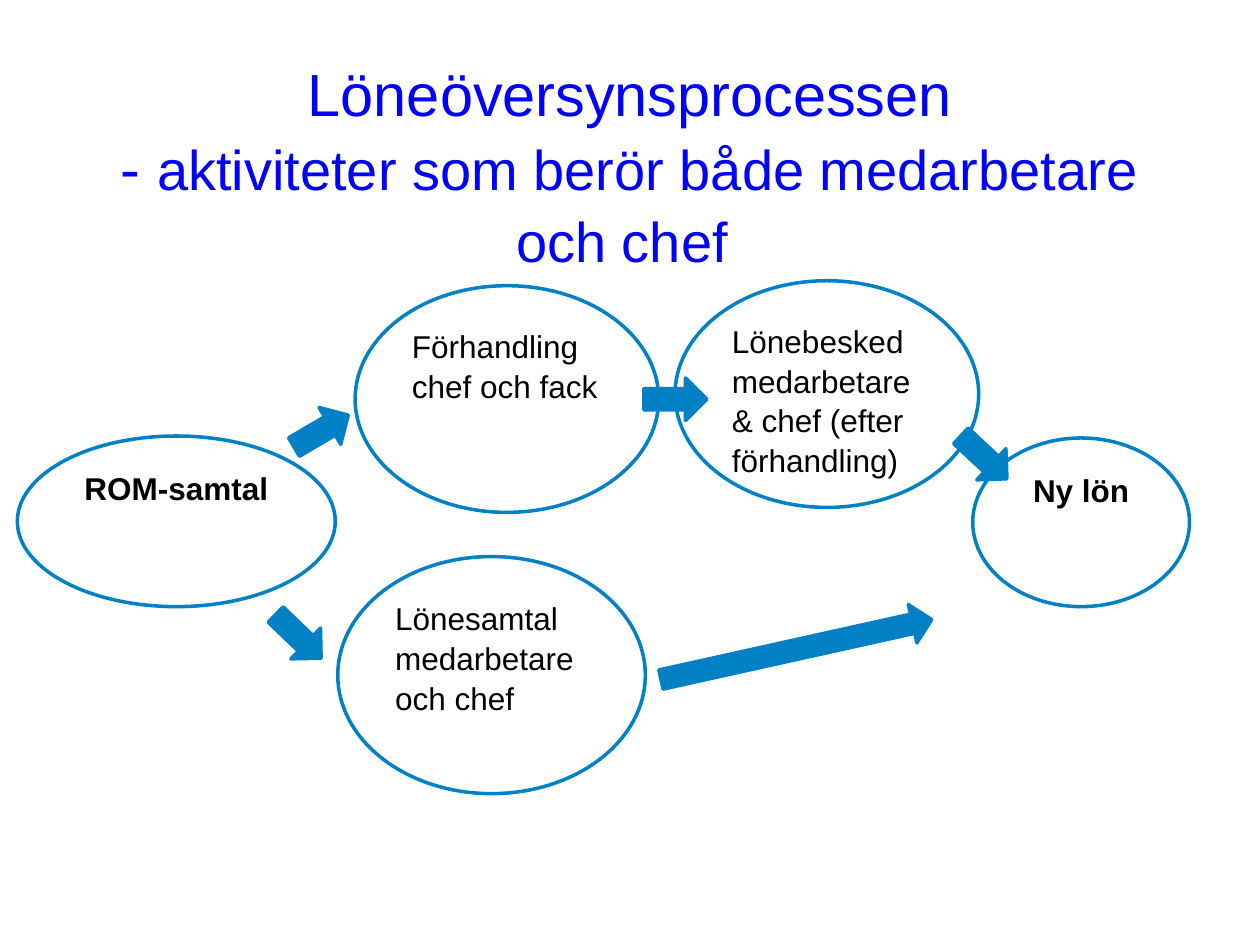
import pptx
import pptx.util
import pptx.dml.color
import pptx.enum.shapes
import pptx.enum.text
import pptx.oxml.ns
from lxml import etree

Cm = pptx.util.Cm
Pt = pptx.util.Pt
SHAPE = pptx.enum.shapes.MSO_SHAPE
ALIGN = pptx.enum.text.PP_ALIGN
ANCHOR = pptx.enum.text.MSO_ANCHOR

TITLE_BLUE = pptx.dml.color.RGBColor(0x00, 0x00, 0xFF)
PROCESS_BLUE = pptx.dml.color.RGBColor(0x00, 0x81, 0xC5)
WHITE = pptx.dml.color.RGBColor(0xFF, 0xFF, 0xFF)
BLACK = pptx.dml.color.RGBColor(0x00, 0x00, 0x00)
LINE_SPACING = 1.05


def add_outlined(kind, left, top, width, height, fill):
    shape = slide.shapes.add_shape(kind, Cm(left), Cm(top), Cm(width), Cm(height))
    shape.shadow.inherit = False
    shape.fill.solid()
    shape.fill.fore_color.rgb = fill
    shape.line.color.rgb = PROCESS_BLUE
    shape.line.width = Pt(2)
    # Rounded line joins
    etree.SubElement(shape.line._get_or_add_ln(), pptx.oxml.ns.qn("a:round"))
    return shape


presentation = pptx.Presentation()
presentation.slide_width = Cm(25.4)
presentation.slide_height = Cm(19.05)
slide = presentation.slides.add_slide(presentation.slide_layouts[5])

# Title
title = slide.shapes.title
title.left, title.top, title.width, title.height = Cm(1.9), Cm(1.7), Cm(21.6), Cm(3.18)
title.text_frame.word_wrap = True
title.text_frame.auto_size = pptx.enum.text.MSO_AUTO_SIZE.NONE
title.text_frame.vertical_anchor = ANCHOR.MIDDLE
heading = title.text_frame.paragraphs[0]
heading.alignment = ALIGN.CENTER
heading.line_spacing = LINE_SPACING
heading.font.name = "Arial"
heading.font.color.rgb = TITLE_BLUE
heading.font.size = Pt(34)
heading.add_run().text = "Löneöversynsprocessen"
heading.add_line_break()
heading.add_run().text = "- "
subheading = heading.add_run()
subheading.text = "aktiviteter som berör både medarbetare och chef "
subheading.font.size = Pt(32)

# Activities: text, left, top, width, height, whether start or end point
activities = [
    ("ROM-samtal", 0.35, 8.79, 6.41, 3.44, True),
    ("Förhandling chef och fack", 7.16, 5.76, 6.12, 4.57, False),
    ("Lönesamtal medarbetare och chef", 6.81, 11.22, 6.2, 4.78, False),
    ("Ny lön", 19.61, 8.83, 4.37, 3.4, True),
    ("Lönebesked medarbetare & chef (efter förhandling)",
     13.61, 5.66, 6.12, 4.57, False),
]
for text, left, top, width, height, is_endpoint in activities:
    activity = add_outlined(SHAPE.FLOWCHART_CONNECTOR, left, top, width, height, WHITE)
    activity.text_frame.word_wrap = True
    activity.text_frame.vertical_anchor = ANCHOR.TOP
    label = activity.text_frame.paragraphs[0]
    label.text = text
    label.alignment = ALIGN.CENTER if is_endpoint else ALIGN.LEFT
    label.line_spacing = LINE_SPACING
    label.font.name = "Arial"
    label.font.size = Pt(18)
    label.font.bold = is_endpoint
    label.font.color.rgb = BLACK

# Arrows between activities: left, top, width, height, rotation
steps = [
    (5.84, 8.26, 1.27, 0.86, 329.5),
    (5.38, 12.4, 1.27, 0.86, 43.9),
    (12.98, 7.62, 1.27, 0.86, 0),
    (13.26, 12.7, 5.59, 0.79, 347.5),
    (19.2, 8.79, 1.27, 0.86, 43),
]
for left, top, width, height, rotation in steps:
    step = add_outlined(SHAPE.RIGHT_ARROW, left, top, width, height, PROCESS_BLUE)
    step.rotation = rotation

presentation.save("out.pptx")
